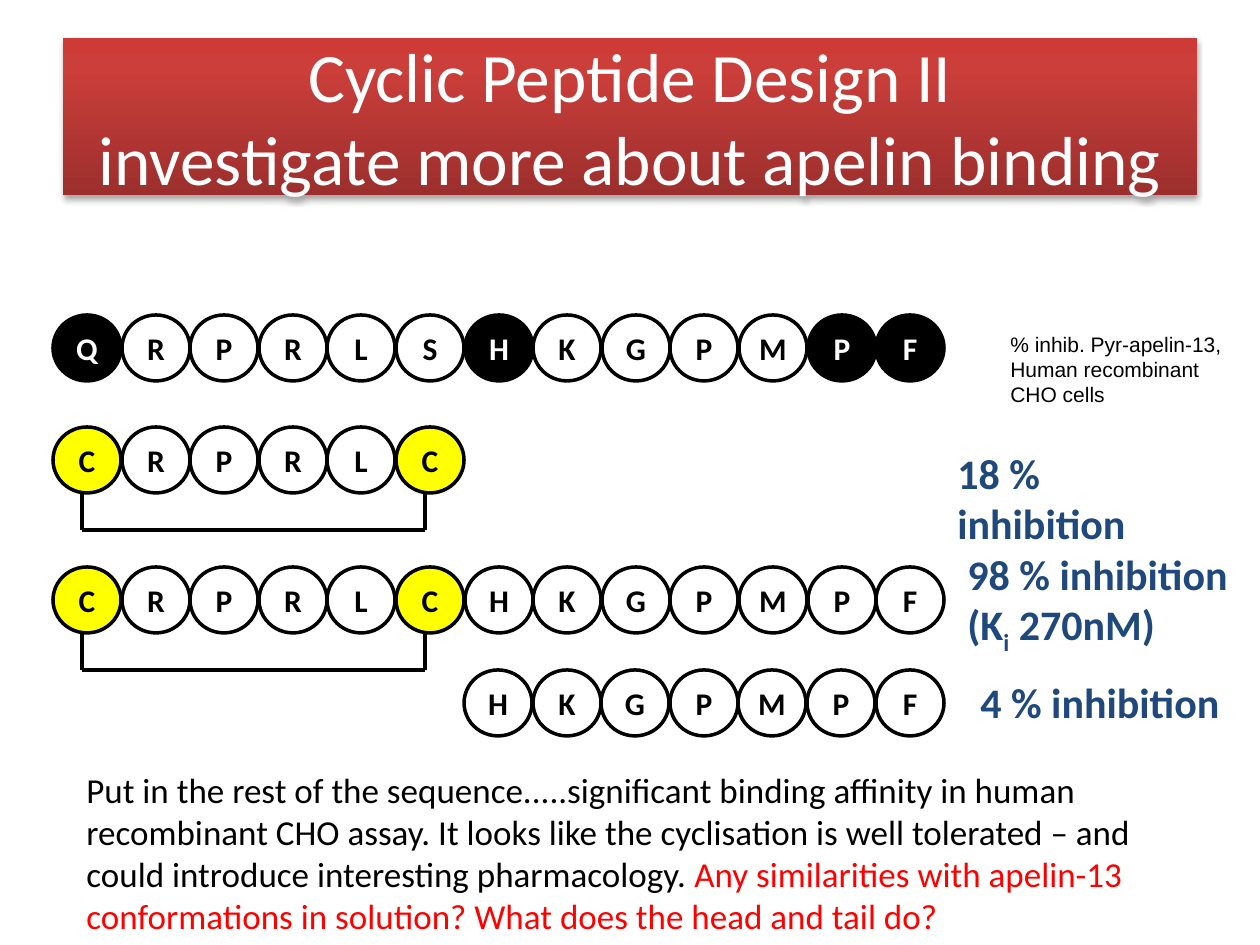
from dataclasses import dataclass

from lxml import etree
from pptx import Presentation
from pptx.dml.color import RGBColor
from pptx.enum.shapes import MSO_CONNECTOR, MSO_SHAPE
from pptx.enum.text import MSO_ANCHOR, PP_ALIGN
from pptx.oxml import parse_xml
from pptx.oxml.ns import nsdecls, qn
from pptx.util import Emu, Pt

RECTANGLE, OVAL = MSO_SHAPE.RECTANGLE, MSO_SHAPE.OVAL
STRAIGHT = MSO_CONNECTOR.STRAIGHT
LEFT, CENTER = PP_ALIGN.LEFT, PP_ALIGN.CENTER
MIDDLE = MSO_ANCHOR.MIDDLE
EMU_PER_PX = 914400 / 126


@dataclass(frozen=True)
class Theme:
    black: str = "000000"
    white: str = "FFFFFF"
    yellow: str = "FFFF00"
    red: str = "FF0000"
    navy: str = "1F497D"
    banner: tuple = ((0, "9C2F2D"), (80, "CB3E3A"), (100, "CE3B37"))
    font: str = "Calibri"
    note_font: str = "Arial"
    title_size: float = 39.6
    result_size: int = 24
    body_size: int = 20
    residue_size: int = 18
    note_size: int = 12
    line_width: int = 2


def px(length):
    return Emu(round(length * EMU_PER_PX))


def rgb(color):
    return RGBColor.from_string(color)


def write(frame, paragraphs, *, size, color, font, bold=False, align=LEFT):
    """Each paragraph is a string or a list of (text, changes) runs."""
    for index, content in enumerate(paragraphs):
        paragraph = frame.paragraphs[0] if index == 0 else frame.add_paragraph()
        paragraph.alignment = align
        runs = [(content, {})] if isinstance(content, str) else content
        for text, changes in runs:
            for number, line in enumerate(text.split("\n")):
                if number:
                    paragraph.add_line_break()
                run = paragraph.add_run()
                run.text = line
                run.font.name = font
                run.font.size = Pt(size)
                run.font.bold = bold
                run.font.color.rgb = rgb(changes.get("color", color))
                if "baseline" in changes:
                    run.font._element.set("baseline", str(changes["baseline"] * 1000))


class SlideBuilder:
    def __init__(self, slide, theme):
        self.slide = slide
        self.theme = theme

    def banner(self, text, left, top, width, height):
        theme = self.theme
        shape = self.slide.shapes.add_shape(RECTANGLE, px(left), px(top), px(width), px(height))
        shape.line.fill.background()
        shape.shadow.inherit = False
        properties = shape._element.spPr
        stops = "".join(
            f'<a:gs pos="{position * 1000}"><a:srgbClr val="{color}"/></a:gs>'
            for position, color in theme.banner
        )
        properties.find(qn("a:ln")).addprevious(parse_xml(
            f'<a:gradFill {nsdecls("a")} rotWithShape="1"><a:gsLst>{stops}</a:gsLst>'
            '<a:lin ang="16200000" scaled="0"/></a:gradFill>'
        ))
        properties.find(qn("a:effectLst")).append(parse_xml(
            f'<a:outerShdw {nsdecls("a")} blurRad="{Pt(3.1)}" dist="{Pt(1.8)}" dir="5400000" '
            f'rotWithShape="0"><a:srgbClr val="{theme.black}"><a:alpha val="35000"/>'
            '</a:srgbClr></a:outerShdw>'
        ))
        frame = shape.text_frame
        frame.word_wrap = True
        frame.vertical_anchor = MIDDLE
        write(frame, [text], size=theme.title_size, color=theme.white, font=theme.font, align=CENTER)

    def residue(self, letter, left, top, width, height, fill):
        theme = self.theme
        shape = self.slide.shapes.add_shape(OVAL, px(left), px(top), px(width), px(height))
        shape.shadow.inherit = False
        shape.fill.solid()
        shape.fill.fore_color.rgb = rgb(fill)
        shape.line.color.rgb = rgb(theme.black)
        shape.line.width = Pt(theme.line_width)
        frame = shape.text_frame
        frame.word_wrap = False
        frame.vertical_anchor = MIDDLE
        frame.margin_left = frame.margin_right = frame.margin_top = frame.margin_bottom = 0
        write(frame, [letter], size=theme.residue_size, font=theme.font, bold=True, align=CENTER,
              color=theme.white if fill == theme.black else theme.black)

    def line(self, x1, y1, x2, y2):
        connector = self.slide.shapes.add_connector(STRAIGHT, px(x1), px(y1), px(x2), px(y2))
        connector.line.color.rgb = rgb(self.theme.black)
        connector.line.width = Pt(self.theme.line_width)
        etree.SubElement(connector._element.spPr, qn("a:effectLst"))

    def text(self, paragraphs, left, top, width, height, wrap=False, **style):
        box = self.slide.shapes.add_textbox(px(left), px(top), px(width), px(height))
        box.text_frame.word_wrap = wrap
        write(box.text_frame, paragraphs, **style)


def main():
    theme = Theme()
    presentation = Presentation()
    presentation.slide_width, presentation.slide_height = px(1260), px(945)
    slide = presentation.slides.add_slide(presentation.slide_layouts[6])
    builder = SlideBuilder(slide, theme)

    # Title banner
    builder.banner("Cyclic Peptide Design II\ninvestigate more about apelin binding",
                   63, 38, 1134, 157)

    # Peptide chains: sequence, left, top, filled positions, fill, ring closure
    chain_left, pitch, residue_width, residue_height = 53, 68.6, 68, 66
    ring_left, ring_right, ring_drop = 82, 425, 37
    chains = [
        ("QRPRLSHKGPMPF", chain_left, 315, {0, 6, 11, 12}, theme.black, False),
        ("CRPRLC", chain_left, 427, {0, 5}, theme.yellow, True),
        ("CRPRLCHKGPMPF", chain_left, 567, {0, 5}, theme.yellow, True),
        ("HKGPMPF", 464, 670, set(), theme.white, False),
    ]
    for sequence, left, top, marked, fill, cyclic in chains:
        for index, letter in enumerate(sequence):
            builder.residue(letter, left + round(index * pitch), top, residue_width,
                            residue_height, fill if index in marked else theme.white)
        if cyclic:
            start = top + residue_height
            end = start + ring_drop
            for x in (ring_left, ring_right):
                builder.line(x, start, x, end)
            builder.line(ring_left, end, ring_right, end)

    # Assay note
    builder.text(["% inhib. Pyr-apelin-13,", "Human recombinant", "CHO cells"],
                 998, 325, 238, 89, size=theme.note_size, color=theme.black, font=theme.note_font)

    # Inhibition results
    result = dict(size=theme.result_size, color=theme.navy, font=theme.font, bold=True)
    builder.text(["18 % inhibition"], 945, 441, 245, 57, wrap=True, **result)
    builder.text(["98 % inhibition", [("(K", {}), ("i", {"baseline": -25}), (" 270nM)", {})]],
                 955, 542, 289, 115, **result)
    builder.text(["4 % inhibition"], 968, 670, 267, 63, **result)

    # Conclusion
    builder.text([[
        ("Put in the rest of the sequence.....significant binding affinity in human recombinant "
         "CHO assay. It looks like the cyclisation is well tolerated – and could introduce "
         "interesting pharmacology. ", {}),
        ("Any similarities with apelin-13 conformations in solution? "
         "What does the head and tail do?", {"color": theme.red}),
    ]], 74, 762, 1134, 183, wrap=True, size=theme.body_size, color=theme.black, font=theme.font)

    presentation.save("out.pptx")


if __name__ == "__main__":
    main()
